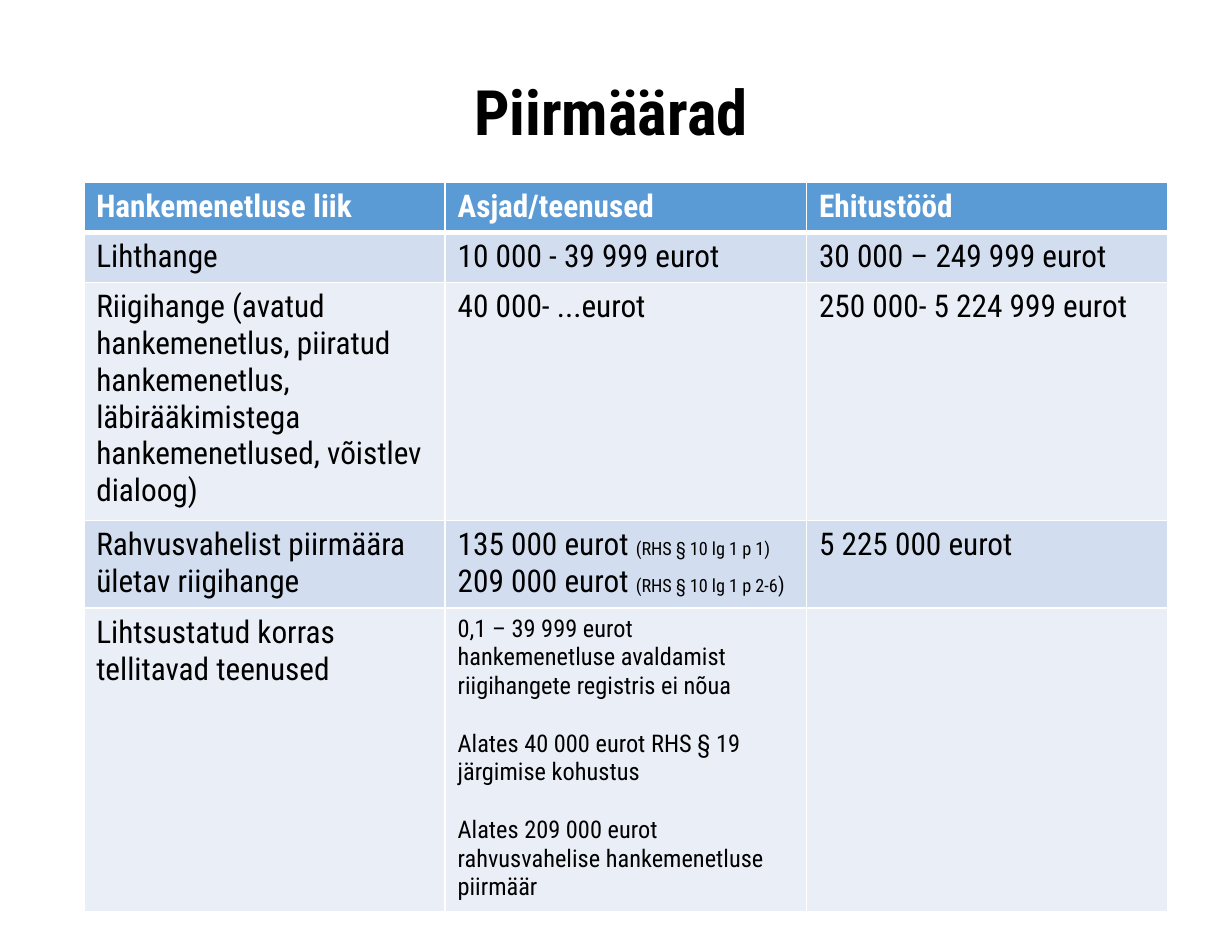
from lxml.etree import SubElement
from pptx import Presentation
from pptx.dml.color import RGBColor
from pptx.enum.text import MSO_ANCHOR, PP_ALIGN
from pptx.oxml.ns import qn
from pptx.util import Cm, Inches, Pt

WHITE = RGBColor(0xFF, 0xFF, 0xFF)
BLACK = RGBColor(0x00, 0x00, 0x00)
HEADER_BLUE = RGBColor(0x5B, 0x9B, 0xD5)
BAND_DARK = RGBColor(0xD2, 0xDE, 0xEF)
BAND_LIGHT = RGBColor(0xEA, 0xEF, 0xF7)

ROW_HEIGHTS = [0.4, 0.4, 1.89, 0.7, 2.43]
BODY, SMALL, NOTE, BRACKET = 18, 14, 10.5, 12

THRESHOLDS = [
    ["Hankemenetluse liik", "Asjad/teenused", "Ehitustööd"],
    ["Lihthange", "10 000 - 39 999 eurot", "30 000 – 249 999 eurot"],
    ["Riigihange (avatud hankemenetlus, piiratud hankemenetlus, "
     "läbirääkimistega hankemenetlused, võistlev dialoog)",
     "40 000- ...eurot", "250 000- 5 224 999 eurot"],
    ["Rahvusvahelist piirmäära ületav riigihange",
     [[("135 000 eurot ", BODY), ("(RHS § 10 lg 1 p 1)", NOTE)],
      [("209 000 eurot ", BODY), ("(RHS § 10 lg 1 p 2-6", NOTE), (")", BRACKET)]],
     "5 225 000 eurot"],
    ["Lihtsustatud korras tellitavad teenused",
     [[("0,1 – 39 999 eurot hankemenetluse avaldamist "
        "riigihangete registris ei nõua", SMALL)],
      [("Alates 40 000 eurot RHS § 19 järgimise kohustus", SMALL)],
      [("Alates 209 000 eurot rahvusvahelise hankemenetluse piirmäär", SMALL)]],
     ""],
]


class SlideBuilder:
    font = "Roboto Condensed"

    def __init__(self, prs):
        self.prs = prs
        self.slide = prs.slides.add_slide(prs.slide_layouts[6])

    def box(self, x, y, w, h):
        sw, sh = self.prs.slide_width, self.prs.slide_height
        return int(x * sw), int(y * sh), int(w * sw), int(h * sh)

    def style(self, p, size, color, bold):
        p.font.name = self.font
        p.font.size = Pt(size)
        p.font.bold = bold
        p.font.color.rgb = color

    def title(self, text, *share):
        tf = self.slide.shapes.add_textbox(*self.box(*share)).text_frame
        tf.word_wrap = True
        tf.vertical_anchor = MSO_ANCHOR.MIDDLE
        tf.margin_left = tf.margin_right = tf.margin_top = 0
        tf.margin_bottom = Inches(0.04)
        p = tf.paragraphs[0]
        p.text = text
        p.alignment = PP_ALIGN.CENTER
        p.line_spacing = 0.88
        self.style(p, 36, BLACK, True)

    def borders(self, cell, bottom):
        tc_pr = cell._tc.get_or_add_tcPr()
        widths = {"lnL": 1, "lnR": 1, "lnT": 1, "lnB": bottom}
        for index, (side, width) in enumerate(widths.items()):
            ln = SubElement(tc_pr, qn(f"a:{side}"), w=str(Pt(width)))
            fill = SubElement(ln, qn("a:solidFill"))
            SubElement(fill, qn("a:srgbClr"), val=str(WHITE))
            tc_pr.insert(index, ln)

    def fill_cell(self, cell, content, color, bold):
        if not content:
            return
        paragraphs = [[(content, BODY)]] if isinstance(content, str) else content
        tf = cell.text_frame
        for i, runs in enumerate(paragraphs):
            p = tf.paragraphs[0] if i == 0 else tf.add_paragraph()
            size = runs[0][1]
            self.style(p, size, color, bold)
            if i and size == SMALL:
                p.space_before = Pt(16.5)
            for text, run_size in runs:
                r = p.add_run()
                r.text = text
                if run_size != size:
                    r.font.size = Pt(run_size)

    def table(self, rows, heights, *share):
        frame = self.slide.shapes.add_table(len(rows), len(rows[0]), *self.box(*share))
        table = frame.table
        for i, (contents, height) in enumerate(zip(rows, heights)):
            table.rows[i].height = Inches(height)
            header = i == 0
            band = HEADER_BLUE if header else BAND_DARK if i % 2 else BAND_LIGHT
            for j, content in enumerate(contents):
                cell = table.cell(i, j)
                cell.fill.solid()
                cell.fill.fore_color.rgb = band
                self.borders(cell, 3 if header else 1)
                self.fill_cell(cell, content, WHITE if header else BLACK, header)


def main():
    prs = Presentation()
    prs.slide_width = Cm(25)
    prs.slide_height = Cm(19)
    s = SlideBuilder(prs)
    s.title("Piirmäärad", 0.056, 0.079, 0.88, 0.095)
    s.table(THRESHOLDS, ROW_HEIGHTS, 0.068, 0.195, 0.88, 0.78)
    prs.save("out.pptx")


if __name__ == "__main__":
    main()
